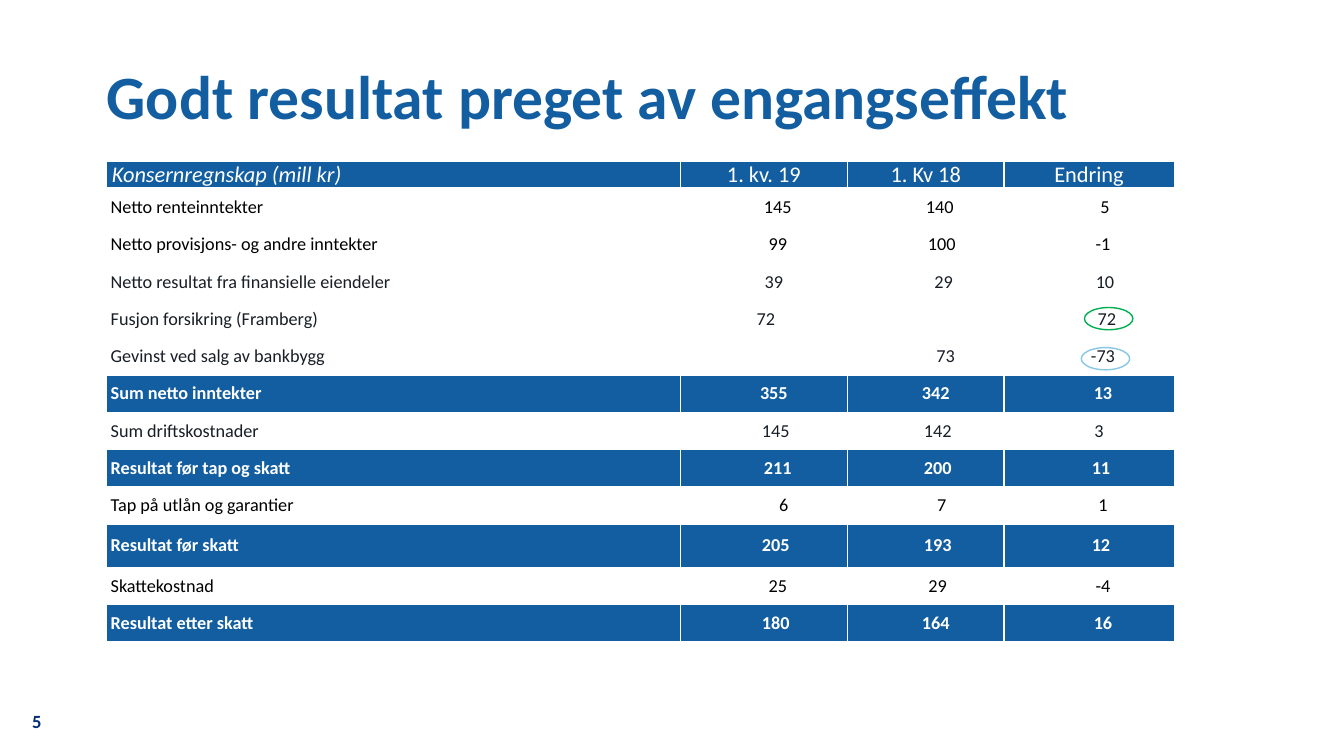
from lxml import etree
from pptx import Presentation
from pptx import util as u
from pptx.dml.color import RGBColor
from pptx.enum import shapes, text
from pptx.oxml import ns

COLORS = {
    "blue": "135EA0", "navy": "032A74", "white": "FFFFFF", "black": "000000",
    "ink": "181E26", "sky": "85C7E5", "green": "00B050",
}
HEADINGS = ["Konsernregnskap (mill kr)", "1. kv. 19", "1. Kv 18", "Endring"]
COLUMN_WIDTHS = [14.45, 4.22, 3.94, 4.29]
HEADING_HEIGHT, LINE_HEIGHT, TALL_HEIGHT = 0.69, 0.94, 1.08
INDENT_STEP = 0.1
ACCOUNTS = [
    ("Netto renteinntekter", "black", [("145", 7), ("140", 7), ("5", 8)]),
    ("Netto provisjons- og andre inntekter", "black", [("99", 7), ("100", 8), ("-1", 7)]),
    ("Netto resultat fra finansielle eiendeler", "ink", [("39", 5), ("29", 9), ("10", 8)]),
    ("Fusjon forsikring (Framberg)", "ink", [("72", 1), ("", 0), ("72", 9)]),
    ("Gevinst ved salg av bankbygg", "ink", [("", 0), ("73", 10), ("-73", 7)]),
    ("Sum netto inntekter", "white", [("355", 5), ("342", 5), ("13", 7)]),
    ("Sum driftskostnader", "ink", [("145", 6), ("142", 6), ("3", 5)]),
    ("Resultat før tap og skatt", "white", [("211", 7), ("200", 6), ("11", 6)]),
    ("Tap på utlån og garantier", "black", [("6", 10), ("7", 8), ("1", 7)]),
    ("Resultat før skatt", "white", [("205", 6), ("193", 6), ("12", 6)]),
    ("Skattekostnad", "black", [("25", 7), ("29", 6), ("-4", 7)]),
    ("Resultat etter skatt", "white", [("180", 6), ("164", 5), ("16", 7)]),
]


def rgb(name):
    return RGBColor.from_string(COLORS[name])


def write(frame, words, size, color, bold=False, italic=False,
          align=text.PP_ALIGN.LEFT, spacing=None):
    paragraph = frame.paragraphs[0]
    paragraph.alignment = align
    paragraph.line_spacing = spacing
    run = paragraph.add_run()
    run.text = words
    run.font.name = "Calibri"
    run.font.size = u.Pt(size)
    run.font.bold = bold
    run.font.italic = italic
    run.font.color.rgb = rgb(color)


class ReportSlide:
    def __init__(self, presentation):
        self.slide = presentation.slides.add_slide(presentation.slide_layouts[5])

    def clear_insets(self, frame):
        frame.margin_left = frame.margin_right = 0
        frame.margin_top = frame.margin_bottom = 0
        frame.auto_size = text.MSO_AUTO_SIZE.NONE

    def title(self, words, left, top, width, height):
        heading = self.slide.shapes.title
        heading.left, heading.top = u.Cm(left), u.Cm(top)
        heading.width, heading.height = u.Cm(width), u.Cm(height)
        frame = heading.text_frame
        self.clear_insets(frame)
        frame.word_wrap = True
        frame.vertical_anchor = text.MSO_ANCHOR.TOP
        write(frame, words, 44, "blue", bold=True, spacing=0.8)

    def page_number(self, words, left, top, side):
        number = self.slide.shapes.add_textbox(u.Cm(left), u.Cm(top), u.Cm(side), u.Cm(side))
        self.clear_insets(number.text_frame)
        number.text_frame.word_wrap = False
        write(number.text_frame, words, 13.3, "navy", bold=True)

    def border(self, cell, edges):
        properties = cell._tc.get_or_add_tcPr()
        for edge, points in edges.items():
            line = etree.SubElement(properties, ns.qn(f"a:ln{edge}"), w=str(u.Pt(points)))
            solid = etree.SubElement(line, ns.qn("a:solidFill"))
            etree.SubElement(solid, ns.qn("a:srgbClr"), val=COLORS["white"])

    def cell(self, cell, words, fill, edges, indent=0, **style):
        self.border(cell, edges)
        cell.fill.solid()
        cell.fill.fore_color.rgb = rgb(fill)
        cell.margin_left = u.Cm(indent * INDENT_STEP)
        cell.margin_right = cell.margin_top = cell.margin_bottom = 0
        cell.vertical_anchor = text.MSO_ANCHOR.MIDDLE
        if words:
            write(cell.text_frame, words, **style)

    def accounts(self, left, top):
        heights = [HEADING_HEIGHT] + [
            TALL_HEIGHT if label == "Resultat før skatt" else LINE_HEIGHT
            for label, _, _ in ACCOUNTS]
        table = self.slide.shapes.add_table(
            len(heights), len(COLUMN_WIDTHS), u.Cm(left), u.Cm(top),
            u.Cm(sum(COLUMN_WIDTHS)), u.Cm(sum(heights))).table
        table.first_row = table.horz_banding = False
        for column, width in zip(table.columns, COLUMN_WIDTHS):
            column.width = u.Cm(width)
        for row, height in zip(table.rows, heights):
            row.height = u.Cm(height)

        heading_edges = {"L": 1, "R": 1, "T": 1, "B": 3}
        for index, heading in enumerate(HEADINGS):
            first = index == 0
            self.cell(table.cell(0, index), heading, "blue", heading_edges,
                      indent=1.3 if first else 0, size=16, color="white", italic=first,
                      align=text.PP_ALIGN.LEFT if first else text.PP_ALIGN.CENTER)

        line_edges = {"L": 1, "R": 1, "B": 1}
        for row, (label, color, amounts) in enumerate(ACCOUNTS, 1):
            total = color == "white"
            fill = "blue" if total else "white"
            style = {"size": 13, "color": color, "bold": total}
            self.cell(table.cell(row, 0), label, fill, line_edges, indent=1, **style)
            for column, (amount, indent) in enumerate(amounts, 1):
                self.cell(table.cell(row, column), amount, fill, line_edges, indent=indent,
                          align=text.PP_ALIGN.CENTER, **style)

    def ring(self, color, left, top):
        ring = self.slide.shapes.add_shape(
            shapes.MSO_SHAPE.OVAL, u.Cm(left), u.Cm(top), u.Cm(1.22), u.Cm(0.56))
        ring.shadow.inherit = False
        ring.fill.background()
        ring.line.color.rgb = rgb(color)
        ring.line.width = u.Pt(1)


def main():
    presentation = Presentation()
    presentation.slide_width, presentation.slide_height = u.Cm(33.87), u.Cm(19.05)
    report = ReportSlide(presentation)
    report.page_number("5", 0.81, 17.88, 0.56)
    report.title("Godt resultat preget av engangseffekt", 2.69, 1.83, 31.18, 3.68)
    report.accounts(2.69, 4.06)
    report.ring("sky", 27.25, 8.76)
    report.ring("green", 27.33, 7.75)
    presentation.save("out.pptx")


if __name__ == "__main__":
    main()
